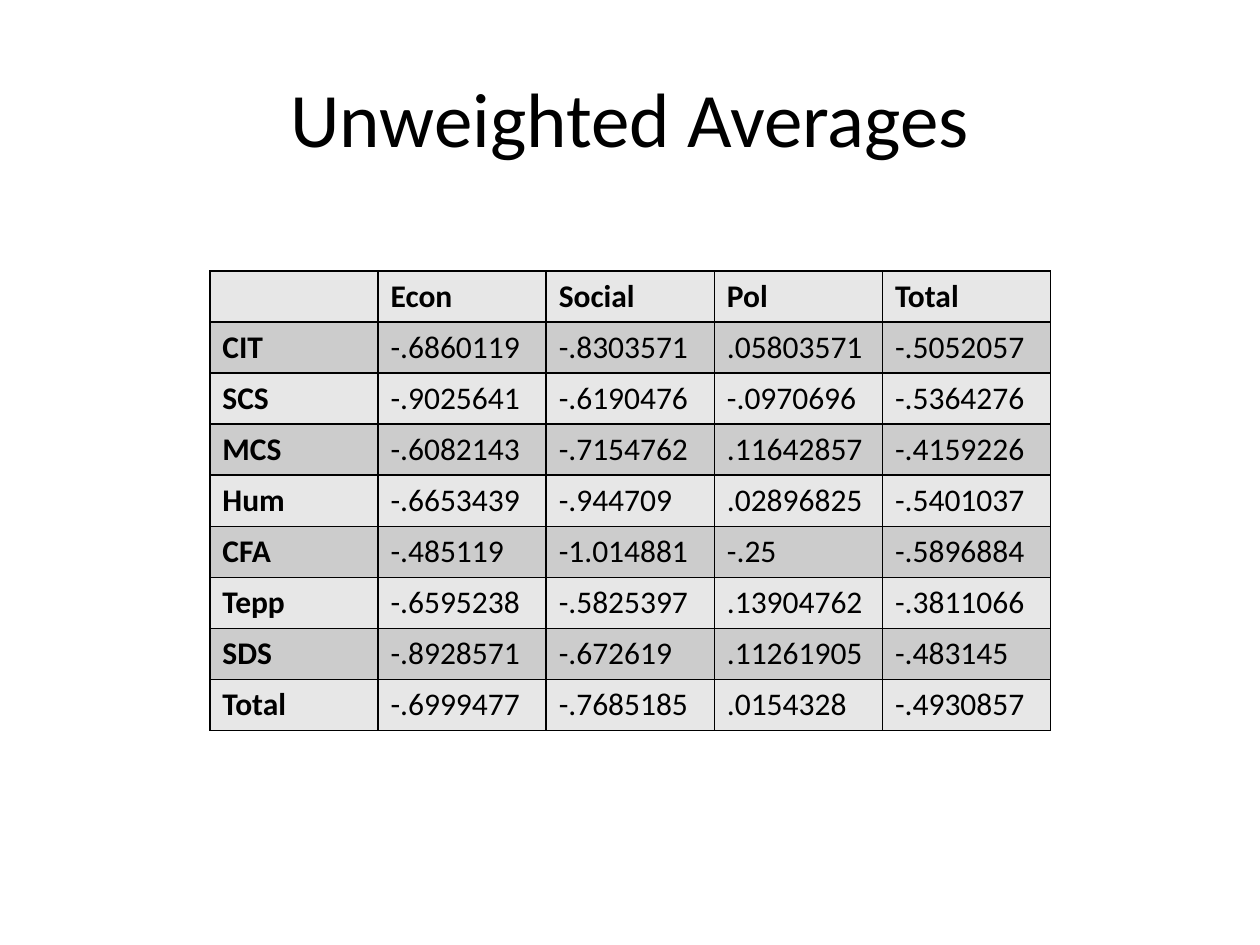
from lxml.etree import SubElement as Sub
from pptx import Presentation
from pptx.dml.color import RGBColor as RGB
from pptx.enum.text import MSO_ANCHOR as Anchor, PP_ALIGN as Align
from pptx.oxml.ns import qn
from pptx.util import Cm, Pt

BLACK = RGB(0x00, 0x00, 0x00)
LIGHT = RGB(0xE7, 0xE7, 0xE7)
DARK = RGB(0xCC, 0xCC, 0xCC)

ROWS = [
    ["", "Econ", "Social", "Pol", "Total"],
    ["CIT", "-.6860119", "-.8303571", ".05803571", "-.5052057"],
    ["SCS", "-.9025641", "-.6190476", "-.0970696", "-.5364276"],
    ["MCS", "-.6082143", "-.7154762", ".11642857", "-.4159226"],
    ["Hum", "-.6653439", "-.944709", ".02896825", "-.5401037"],
    ["CFA", "-.485119", "-1.014881", "-.25", "-.5896884"],
    ["Tepp", "-.6595238", "-.5825397", ".13904762", "-.3811066"],
    ["SDS", "-.8928571", "-.672619", ".11261905", "-.483145"],
    ["Total", "-.6999477", "-.7685185", ".0154328", "-.4930857"],
]


def style(para, size, bold=False):
    for run in para.runs:
        font = run.font
        font.name, font.size, font.bold = "Calibri", Pt(size), bold
        font.color.rgb = BLACK


def border(cell):
    props = cell._tc.get_or_add_tcPr()
    for side in ("a:lnL", "a:lnR", "a:lnT", "a:lnB"):
        line = Sub(props, qn(side), w=str(Pt(1)))
        fill = Sub(line, qn("a:solidFill"))
        Sub(fill, qn("a:srgbClr"), val=str(BLACK))


deck = Presentation()
deck.slide_width, deck.slide_height = Cm(25.4), Cm(19.05)
slide = deck.slides.add_slide(deck.slide_layouts[6])

# Title
title = slide.shapes.add_textbox(Cm(1.27), Cm(0.76), Cm(22.86), Cm(3.18))
frame = title.text_frame
frame.word_wrap = True
frame.vertical_anchor = Anchor.MIDDLE
frame.text = "Unweighted Averages"
para = frame.paragraphs[0]
para.alignment = Align.CENTER
style(para, 44)

# Table of averages, with equal columns and rows
wide, high = Cm(3.39), Cm(1.03)
count, span = len(ROWS), len(ROWS[0])
table = slide.shapes.add_table(
    count, span, Cm(4.23), Cm(5.46), wide * span, high * count).table
table.first_row = table.horz_banding = False
for col in table.columns:
    col.width = wide
for row in table.rows:
    row.height = high

# Cells: bold headings, bands of grey, black grid
for r, row in enumerate(ROWS):
    for c, text in enumerate(row):
        cell = table.cell(r, c)
        border(cell)
        cell.fill.solid()
        cell.fill.fore_color.rgb = DARK if r % 2 else LIGHT
        cell.text_frame.text = text
        style(cell.text_frame.paragraphs[0], 18, r == 0 or c == 0)

deck.save("out.pptx")
